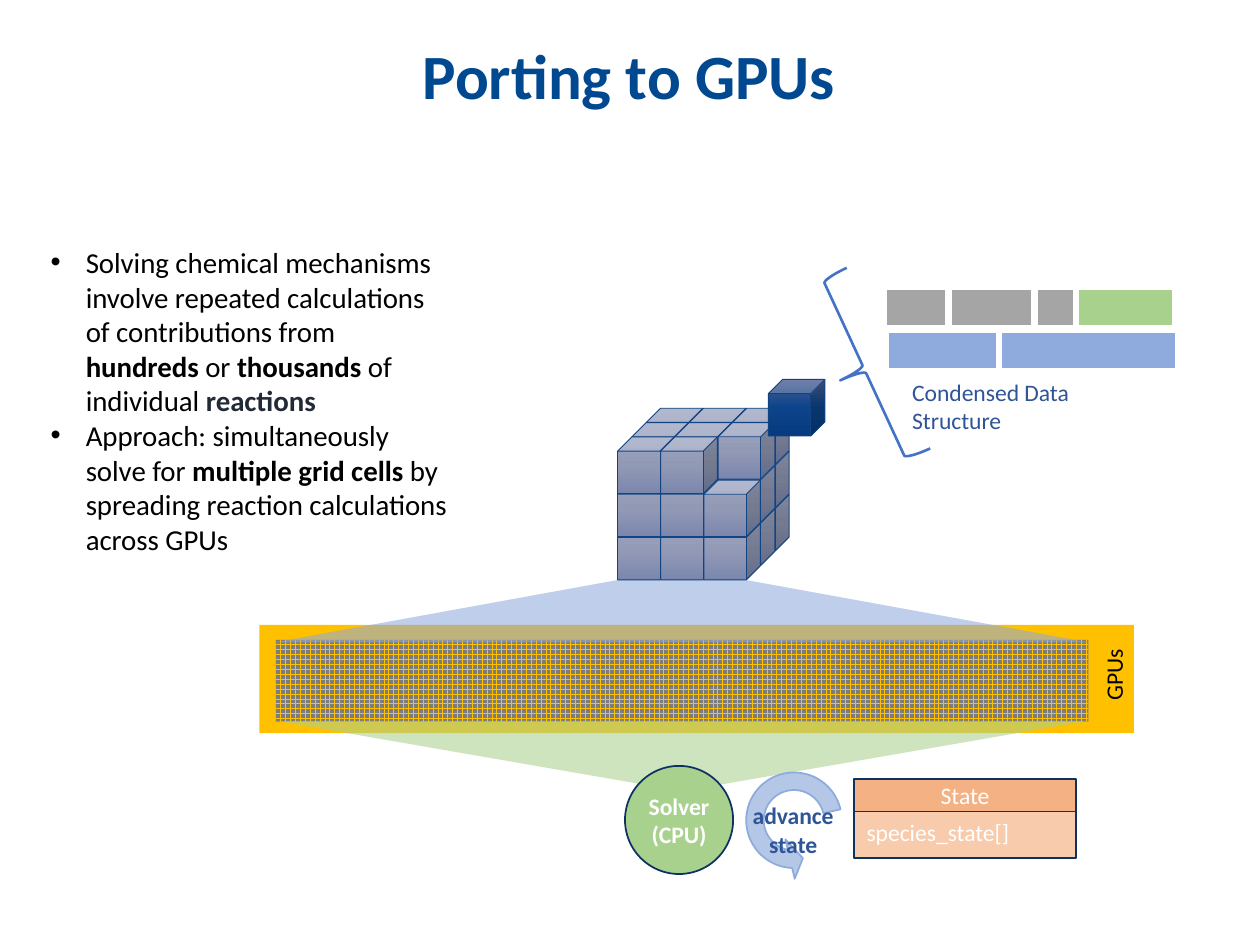
from copy import deepcopy

from lxml import etree
from pptx import Presentation
from pptx import util as u
from pptx.dml.color import RGBColor
from pptx.enum import dml, shapes, text
from pptx.oxml import ns

FONT = "Calibri"
COLORS = {
    "title": "004890", "black": "000000", "white": "FFFFFF", "slate": "222A35",
    "label": "2F5597", "brace": "4472C4", "gold": "FFC000", "core": "7C7C7C",
    "navy": "0D3262", "state": "F4B183", "species": "F8CBAD", "arrow": "B4C7E7",
    "blue": "8FAADC", "green": "A9D18E", "gray": "A5A5A5", "edge": "124484",
}
CELL_GRADIENT = ("9EA5C0", "9199B5", "7C87AD")
ACTIVE_GRADIENT = ("4C6093", "0C438A", "063B7F")
SHAPE = shapes.MSO_SHAPE
ALIGN = text.PP_ALIGN
ANCHOR = text.MSO_ANCHOR


def rgb(name):
    """Return the named colour."""
    return RGBColor.from_string(COLORS[name])


def add_run(paragraph, words, size, color, bold=False):
    """Append one formatted run."""
    run = paragraph.add_run()
    run.text = words
    run.font.name = FONT
    run.font.size = u.Pt(size)
    run.font.bold = bold
    run.font.color.rgb = rgb(color)


def write_lines(shape, lines, size, color, bold=False, align=ALIGN.LEFT,
                anchor=ANCHOR.TOP, wrap=True):
    """Write one paragraph per line into a shape."""
    frame = shape.text_frame
    frame.word_wrap = wrap
    frame.vertical_anchor = anchor
    for index, line in enumerate(lines):
        paragraph = frame.add_paragraph() if index else frame.paragraphs[0]
        paragraph.alignment = align
        add_run(paragraph, line, size, color, bold)


def add_text(slide, left, top, width, height):
    """Add an empty text box measured in centimetres."""
    return slide.shapes.add_textbox(u.Cm(left), u.Cm(top), u.Cm(width), u.Cm(height))


def add_figure(slide, kind, left, top, width, height, fill=None, line=None, weight=1):
    """Add a preset shape measured in centimetres."""
    shape = slide.shapes.add_shape(kind, u.Cm(left), u.Cm(top), u.Cm(width), u.Cm(height))
    shape.shadow.inherit = False
    if fill:
        shape.fill.solid()
        shape.fill.fore_color.rgb = rgb(fill)
    else:
        shape.fill.background()
    if line:
        shape.line.color.rgb = rgb(line)
        shape.line.width = u.Pt(weight)
    else:
        shape.line.fill.background()
    return shape


def draw_title(slide, left, top, width, height):
    """Place the heading."""
    box = add_text(slide, left, top, width, height)
    write_lines(box, ["Porting to GPUs"], 36, "title", True, ALIGN.CENTER, ANCHOR.MIDDLE)
    box.text_frame.paragraphs[0].line_spacing = 0.9


def draw_bullets(slide, left, top, width, height):
    """Place the bulleted explanation."""
    bullets = [
        [("Solving chemical mechanisms involve repeated calculations of contributions from ",
          "black", False), ("hundreds", "black", True), (" or ", "black", False),
         ("thousands", "black", True), (" of individual ", "black", False),
         ("reactions", "slate", True)],
        [("Approach: simultaneously solve for ", "black", False),
         ("multiple grid cells", "black", True),
         (" by spreading reaction calculations across GPUs", "black", False)],
    ]
    frame = add_text(slide, left, top, width, height).text_frame
    frame.word_wrap = True
    frame.margin_left = frame.margin_right = u.Cm(0.18)
    frame.margin_top, frame.margin_bottom = u.Cm(0.13), u.Cm(0.1)
    for index, runs in enumerate(bullets):
        paragraph = frame.add_paragraph() if index else frame.paragraphs[0]
        properties = paragraph._p.get_or_add_pPr()
        properties.set("marL", str(u.Cm(0.71)))
        properties.set("indent", str(-u.Cm(0.71)))
        etree.SubElement(properties, ns.qn("a:buFont")).set("typeface", "Arial")
        etree.SubElement(properties, ns.qn("a:buChar")).set("char", "•")
        for words, color, bold in runs:
            add_run(paragraph, words, 16.5, color, bold)


def draw_beam(slide, left, top, width, height, color, slope, rotation=0):
    """Place a translucent trapezoid."""
    beam = add_figure(slide, SHAPE.TRAPEZOID, left, top, width, height, color)
    beam.adjustments[0] = slope
    beam.rotation = rotation
    tint = beam._element.spPr.find(ns.qn("a:solidFill"))[0]
    etree.SubElement(tint, ns.qn("a:alpha")).set("val", "57000")


def draw_gpus(slide, left, top, width, height):
    """Place the GPU panel, its core grid and both beams."""
    add_figure(slide, SHAPE.RECTANGLE, left, top, width, height, "gold")
    cores = add_figure(slide, SHAPE.RECTANGLE, left + 0.33, top + 0.3,
                       width - 1.25, height - 0.53)
    cores.fill.patterned()
    cores.fill.pattern = dml.MSO_PATTERN.LARGE_GRID
    cores.fill.fore_color.rgb = rgb("gold")
    cores.fill.back_color.rgb = rgb("core")
    label = add_text(slide, left + width - 1.32, top + 0.43, 1.83, 0.84)
    label.rotation = 270
    write_lines(label, ["GPUs"], 13.5, "black")
    draw_beam(slide, left + 0.31, top - 0.92, width - 1.22, 1.27, "blue", 5.5)
    draw_beam(slide, left + 0.33, top + 1.93, width - 1.25, 1.42, "green", 6.23, 180)


def draw_solver(slide, left, top):
    """Place the solver circle, the advance arrow and the state box."""
    solver = add_figure(slide, SHAPE.OVAL, left, top + 0.1, 2.18, 2.18, "green", "navy")
    write_lines(solver, ["Solver", "(CPU)"], 13.5, "white", True, ALIGN.CENTER,
                ANCHOR.MIDDLE, False)
    arrow = add_figure(slide, SHAPE.CIRCULAR_ARROW, left + 2.21, top, 2.39, 2.39,
                       "arrow", "blue")
    for index, value in enumerate((0.148, 11.423, 204.775, 54.212, 0.171)):
        arrow.adjustments[index] = value
    arrow.rotation = 257.1
    arrow._element.spPr.xfrm.set("flipH", "1")
    label = add_text(slide, left + 2.31, top + 0.69, 2.16, 1.42)
    write_lines(label, ["advance", "state"], 13.5, "label", True, ALIGN.CENTER, wrap=False)
    header = add_figure(slide, SHAPE.RECTANGLE, left + 4.62, top + 0.36, 4.47, 0.66,
                        "state", "navy")
    write_lines(header, ["State"], 13.5, "white", align=ALIGN.CENTER, anchor=ANCHOR.MIDDLE)
    species = add_figure(slide, SHAPE.RECTANGLE, left + 4.62, top + 1.02, 4.47, 0.94,
                         "species", "navy")
    write_lines(species, ["species_state[]"], 13.5, "white")


def draw_cube(slide, left, top, gradient):
    """Place one shaded grid cell."""
    cube = add_figure(slide, SHAPE.CUBE, left, top, 1.14, 1.14, line="edge", weight=0.5)
    cube.fill.gradient()
    cube.fill.gradient_angle = 270
    stops = cube._element.spPr.find(ns.qn("a:gradFill")).find(ns.qn("a:gsLst"))
    stops.append(deepcopy(stops[0]))
    for index, stop in enumerate(cube.fill.gradient_stops):
        stop.position = index / 2
        stop.color.rgb = RGBColor.from_string(gradient[index])


def draw_grid_cells(slide, left, top, pitch=0.87, depth=0.29):
    """Stack the cells from bottom to top and back to front, one pulled out."""
    for row in (2, 1, 0):
        for layer in range(3):
            for column in range(3):
                if (row, layer, column) != (0, 2, 2):
                    draw_cube(slide, left + pitch * column + depth * (2 - layer),
                              top + 0.58 + pitch * row + depth * layer, CELL_GRADIENT)
    draw_cube(slide, left + 3.04, top, ACTIVE_GRADIENT)


def draw_condensed_data(slide, left, top, gap=0.08):
    """Place the brace, the rows of data blocks and their label."""
    brace = add_figure(slide, SHAPE.LEFT_BRACE, left, top, 1.07, 4.01,
                       line="brace", weight=1.5)
    brace.rotation = 335.2
    rows = [
        (0.97, 0.38, [(1.22, "gray"), (1.65, "gray"), (0.76, "gray"), (1.93, "green")]),
        (1, 1.24, [(2.21, "blue"), (3.53, "blue")]),
    ]
    for x, y, blocks in rows:
        for width, color in blocks:
            add_figure(slide, SHAPE.RECTANGLE, left + x, top + y, width, 0.76,
                       color, "white", 1.5)
            x += width + gap
    label = add_text(slide, left + 1.25, top + 2.05, 5.45, 1.42)
    write_lines(label, ["Condensed Data Structure"], 13.5, "label")


def main():
    """Build and save the slide."""
    presentation = Presentation()
    presentation.slide_width, presentation.slide_height = u.Cm(25.4), u.Cm(19.05)
    slide = presentation.slides.add_slide(presentation.slide_layouts[6])
    draw_bullets(slide, 0.84, 4.8, 8.38, 3.38)
    draw_gpus(slide, 5.23, 12.6, 17.63, 2.18)
    draw_solver(slide, 12.6, 15.34)
    draw_grid_cells(slide, 12.45, 7.65)
    draw_condensed_data(slide, 16.89, 5.44)
    draw_title(slide, 0.97, 0.43, 23.42, 2.34)
    presentation.save("out.pptx")


if __name__ == "__main__":
    main()
